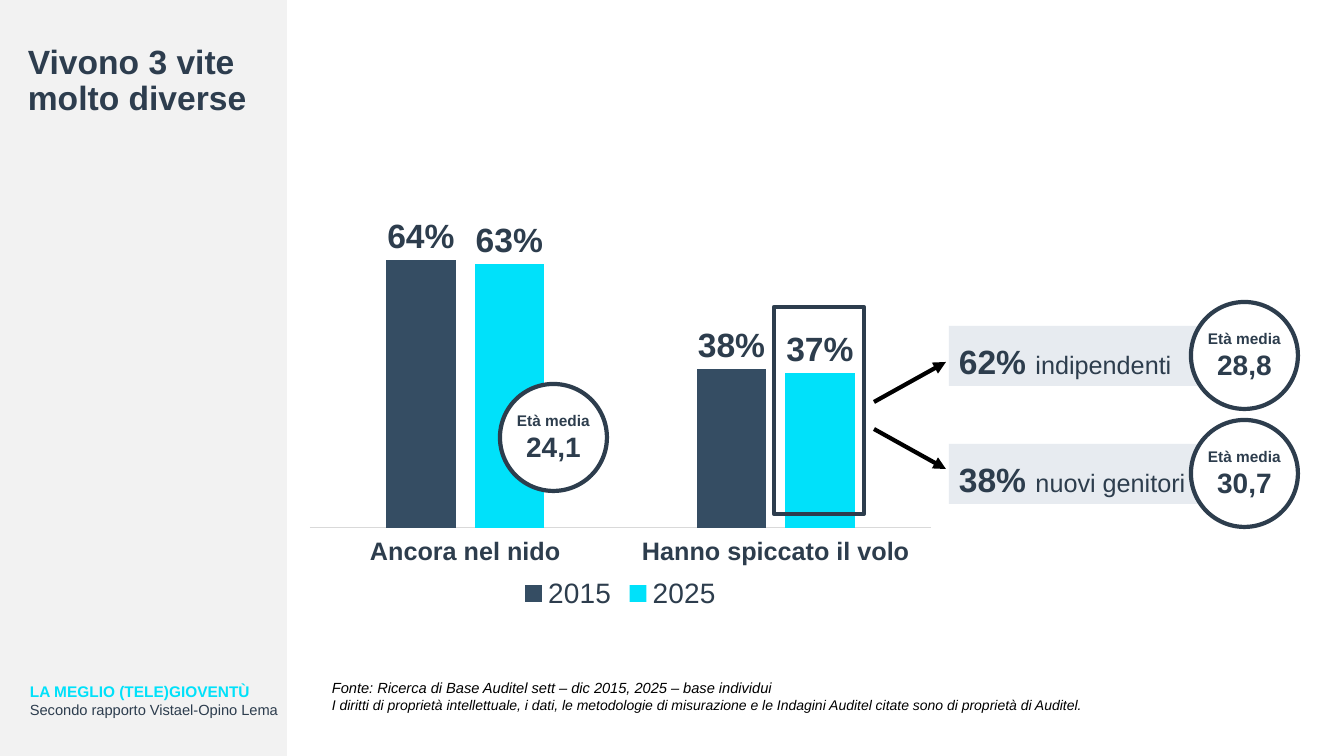
from dataclasses import dataclass
from typing import Optional

from lxml.etree import SubElement
from pptx import Presentation
from pptx.chart.data import CategoryChartData
from pptx.dml.color import RGBColor
from pptx.enum.chart import XL_CHART_TYPE, XL_LABEL_POSITION, XL_LEGEND_POSITION, XL_TICK_LABEL_POSITION, XL_TICK_MARK
from pptx.enum.shapes import MSO_CONNECTOR, MSO_SHAPE
from pptx.enum.text import MSO_ANCHOR, PP_ALIGN
from pptx.oxml import parse_xml
from pptx.oxml.ns import nsdecls, qn
from pptx.util import Emu, Pt

EMU_PER_PX = 914400 / 100.8
FONT = "Arial"
NAVY = "2D3D4D"
TITLE_NAVY = "2D3D4E"
SLATE = "354D63"
CYAN = "00E1FA"
BLACK = "000000"
WHITE = "FFFFFF"
SIDEBAR_GREY = "F2F2F2"
BAND_GREY = "E7EBF0"
AXIS_GREY = "D9D9D9"


@dataclass(frozen=True)
class Frame:
    left: int
    top: int
    width: int
    height: int


@dataclass(frozen=True)
class Span:
    text: str
    size: float
    color: str = NAVY
    bold: bool = False
    italic: bool = False


@dataclass(frozen=True)
class Group:
    share: str
    name: str
    top: int


@dataclass(frozen=True)
class AgeBadge:
    age: str
    left: int
    top: int


@dataclass(frozen=True)
class Arrow:
    start_y: int
    end_y: int


@dataclass(frozen=True)
class Year:
    name: str
    values: tuple[float, float]
    color: str


GROUPS = (Group("62%", "indipendenti", 326), Group("38%", "nuovi genitori", 444))
BADGES = (AgeBadge("24,1", 500, 384), AgeBadge("28,8", 1191, 302), AgeBadge("30,7", 1191, 420))
ARROWS = (Arrow(402, 362), Arrow(429, 469))
CATEGORIES = ("Ancora nel nido", "Hanno spiccato il volo")
YEARS = (Year("2015", (0.64, 0.38), SLATE), Year("2025", (0.63, 0.37), CYAN))


def px(value: int) -> Emu:
    return Emu(round(value * EMU_PER_PX))


def rgb(value: str) -> RGBColor:
    return RGBColor.from_string(value)


def place(frame: Frame) -> tuple[Emu, Emu, Emu, Emu]:
    return px(frame.left), px(frame.top), px(frame.width), px(frame.height)


def style_font(font, size: float, color: str, bold: bool = False, italic: bool = False) -> None:
    font.name = FONT
    font.size = Pt(size)
    font.bold = bold
    font.italic = italic
    font.color.rgb = rgb(color)


def write(box, paragraphs: list[list[Span]], align=PP_ALIGN.LEFT, line_spacing: float = 1.0) -> None:
    text_frame = box.text_frame
    text_frame.word_wrap = True
    for index, spans in enumerate(paragraphs):
        para = text_frame.add_paragraph() if index else text_frame.paragraphs[0]
        para.alignment = align
        para.line_spacing = line_spacing
        for span in spans:
            run = para.add_run()
            run.text = span.text
            style_font(run.font, span.size, span.color, span.bold, span.italic)


def add_text(page, frame: Frame, paragraphs: list[list[Span]], line_spacing: float = 1.0) -> None:
    write(page.shapes.add_textbox(*place(frame)), paragraphs, line_spacing=line_spacing)


def add_box(page, kind, frame: Frame, fill: Optional[str] = None, line: Optional[str] = None):
    box = page.shapes.add_shape(kind, *place(frame))
    box.shadow.inherit = False
    if fill:
        box.fill.solid()
        box.fill.fore_color.rgb = rgb(fill)
    else:
        box.fill.background()
    if line:
        box.line.color.rgb = rgb(line)
        box.line.width = Pt(3)
    else:
        box.line.fill.background()
    return box


def add_arrow(page, arrow: Arrow) -> None:
    connector = page.shapes.add_connector(
        MSO_CONNECTOR.STRAIGHT, px(874), px(arrow.start_y), px(946), px(arrow.end_y))
    connector.line.color.rgb = rgb(BLACK)
    connector.line.width = Pt(3)
    SubElement(connector.line._get_or_add_ln(), qn("a:tailEnd"), type="triangle")
    SubElement(connector._element.spPr, qn("a:effectLst"))


def add_group(page, group: Group) -> None:
    box = add_box(page, MSO_SHAPE.RECTANGLE, Frame(949, group.top, 258, 60), BAND_GREY)
    box.text_frame.vertical_anchor = MSO_ANCHOR.MIDDLE
    box.text_frame.margin_top = px(11)
    write(box, [[Span(group.share + " ", 24, bold=True), Span(group.name, 18)]], line_spacing=1.12)


def add_badge(page, badge: AgeBadge) -> None:
    circle = add_box(page, MSO_SHAPE.OVAL, Frame(badge.left, badge.top, 107, 107), WHITE, NAVY)
    circle.text_frame.vertical_anchor = MSO_ANCHOR.MIDDLE
    circle.text_frame.margin_left = circle.text_frame.margin_right = 0
    write(circle, [[Span("Età media", 11, bold=True)], [Span(badge.age, 20, bold=True)]], PP_ALIGN.CENTER)


def add_year_chart(page, frame: Frame) -> None:
    data = CategoryChartData(number_format="0%")
    data.categories = CATEGORIES
    for year in YEARS:
        data.add_series(year.name, year.values)
    chart = page.shapes.add_chart(XL_CHART_TYPE.COLUMN_CLUSTERED, *place(frame), data).chart
    style_font(chart.font, 10, BLACK)
    chart.has_title = False
    chart.has_legend = True
    chart.legend.position = XL_LEGEND_POSITION.BOTTOM
    chart.legend.include_in_layout = False
    style_font(chart.legend.font, 20, NAVY)

    names = chart.category_axis
    names.major_tick_mark = XL_TICK_MARK.NONE
    names.tick_label_position = XL_TICK_LABEL_POSITION.LOW
    names.format.line.color.rgb = rgb(AXIS_GREY)
    names.format.line.width = Pt(0.75)
    style_font(names.tick_labels.font, 18, NAVY, True)
    shares = chart.value_axis
    shares.minimum_scale = 0
    shares.maximum_scale = 0.7
    shares.has_major_gridlines = False
    shares.visible = False

    plot = chart.plots[0]
    plot.gap_width = 219
    plot.overlap = -27
    plot.vary_by_categories = False
    for series, year in zip(plot.series, YEARS):
        series.format.fill.solid()
        series.format.fill.fore_color.rgb = rgb(year.color)
        labels = series.data_labels
        labels.show_value = True
        labels.position = XL_LABEL_POSITION.OUTSIDE_END
        labels.number_format = "0%"
        labels.number_format_is_linked = False
        style_font(labels.font, 24, NAVY, True)

    area = chart._chartSpace.chart.plotArea
    for layout in area.findall(qn("c:layout")):
        area.remove(layout)
    area.insert(0, parse_xml(
        f'<c:layout {nsdecls("c")}><c:manualLayout><c:layoutTarget val="inner"/>'
        '<c:xMode val="edge"/><c:yMode val="edge"/><c:x val="0.02"/><c:y val="0.04"/>'
        '<c:w val="0.96"/><c:h val="0.74"/></c:manualLayout></c:layout>'))


def main() -> None:
    deck = Presentation()
    deck.slide_width, deck.slide_height = px(1344), px(756)
    page = deck.slides.add_slide(deck.slide_layouts[6])
    add_box(page, MSO_SHAPE.RECTANGLE, Frame(0, 0, 287, 756), SIDEBAR_GREY)
    add_text(page, Frame(20, 677, 583, 46), [
        [Span("LA MEGLIO (TELE)GIOVENTÙ", 11, CYAN, bold=True)],
        [Span("Secondo rapporto Vistael-Opino Lema", 10.5, TITLE_NAVY)]])
    add_text(page, Frame(18, 40, 262, 338),
             [[Span("Vivono 3 vite molto diverse", 24, TITLE_NAVY, bold=True)]], 0.9)
    add_text(page, Frame(322, 674, 796, 62), [
        [Span("Fonte: Ricerca di Base Auditel sett – dic 2015, 2025 – base individui", 10.5, BLACK, italic=True)],
        [Span("I diritti di proprietà intellettuale, i dati, le metodologie di misurazione e le Indagini "
              "Auditel citate sono di proprietà di Auditel.", 10, BLACK, italic=True)]])
    add_year_chart(page, Frame(297, 218, 647, 397))
    for arrow in ARROWS:
        add_arrow(page, arrow)
    for group in GROUPS:
        add_group(page, group)
    for badge in BADGES:
        add_badge(page, badge)
    add_box(page, MSO_SHAPE.RECTANGLE, Frame(774, 307, 90, 207), line=NAVY)
    deck.save("out.pptx")


if __name__ == "__main__":
    main()
